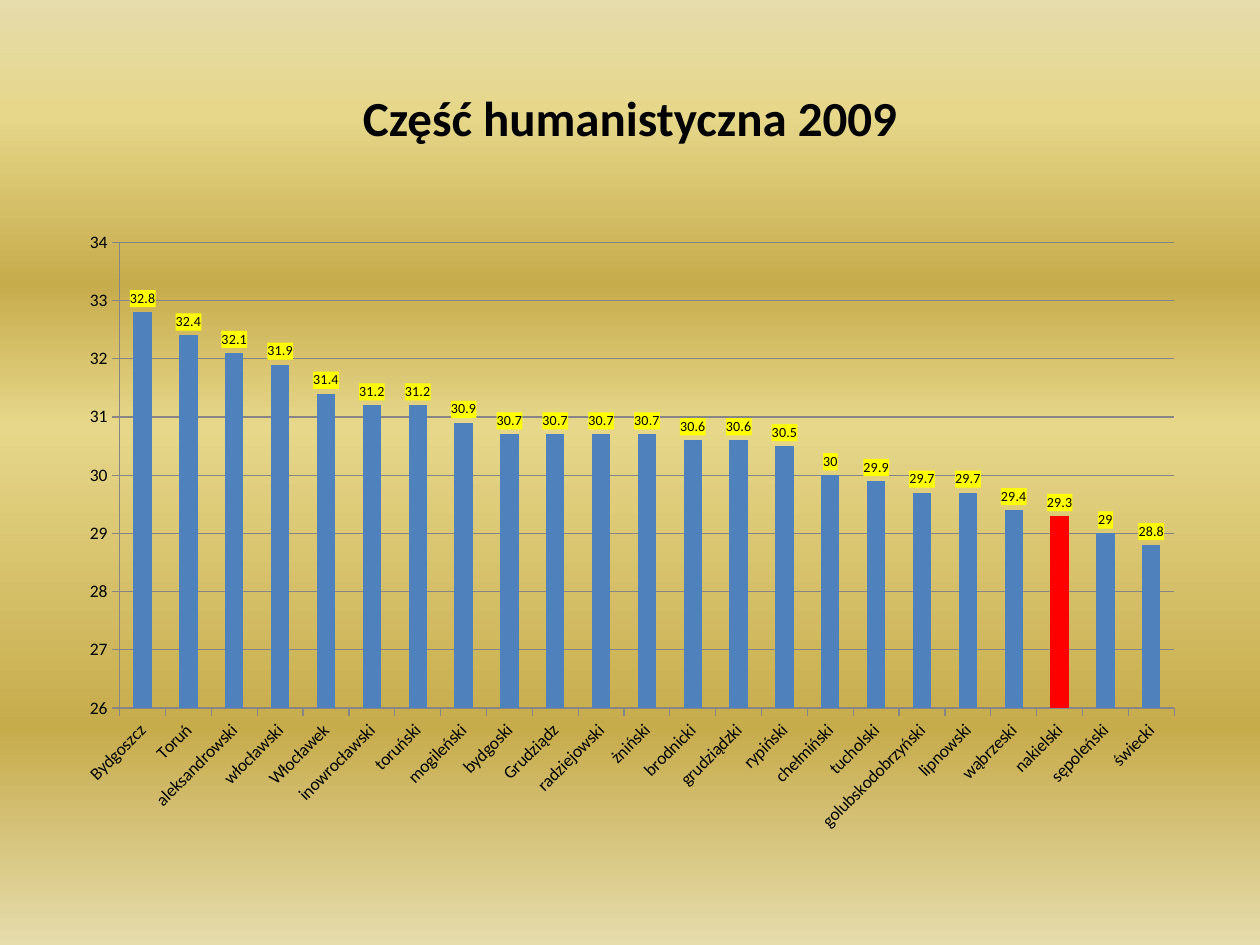
from typing import NamedTuple

import pptx
import pptx.chart.data
import pptx.dml.color
import pptx.enum.chart
import pptx.enum.text
import pptx.oxml
import pptx.oxml.ns
import pptx.util
from lxml import etree

RGB = pptx.dml.color.RGBColor
qn = pptx.oxml.ns.qn

BLACK = RGB(0x00, 0x00, 0x00)
BLUE = RGB(0x4F, 0x81, 0xBD)
RED = RGB(0xFF, 0x00, 0x00)
YELLOW = RGB(0xFF, 0xFF, 0x00)
GREY = RGB(0x86, 0x86, 0x86)
CREAM = RGB(0xE6, 0xDC, 0xAC)
SAND = RGB(0xE6, 0xD7, 0x8A)
GOLD = RGB(0xC7, 0xAC, 0x4C)
FONT = "Calibri"
WIDTH = pptx.util.Inches(10)
HEIGHT = pptx.util.Inches(7.5)


class Area(NamedTuple):
    x: float
    y: float
    w: float
    h: float

    def on_slide(self) -> tuple[int, int, int, int]:
        return (int(self.x * WIDTH), int(self.y * HEIGHT),
                int(self.w * WIDTH), int(self.h * HEIGHT))


class Stop(NamedTuple):
    percent: int
    color: RGB


class County(NamedTuple):
    name: str
    score: float


TITLE = Area(0.05, 0.04, 0.9, 1 / 6)
CHART = Area(0.05, 0.7 / 3, 0.9, 0.66)
PLOT = Area(0.05, 0.035, 0.93, 0.747)
STOPS = [Stop(0, CREAM), Stop(12, SAND), Stop(30, GOLD),
         Stop(45, SAND), Stop(77, GOLD), Stop(100, CREAM)]
HIGHLIGHT = "nakielski"
COUNTIES = [
    County("Bydgoszcz", 32.8), County("Toruń", 32.4),
    County("aleksandrowski", 32.1), County("włocławski", 31.9),
    County("Włocławek", 31.4), County("inowrocławski", 31.2),
    County("toruński", 31.2), County("mogileński", 30.9),
    County("bydgoski", 30.7), County("Grudziądz", 30.7),
    County("radziejowski", 30.7), County("żniński", 30.7),
    County("brodnicki", 30.6), County("grudziądzki", 30.6),
    County("rypiński", 30.5), County("chełmiński", 30),
    County("tucholski", 29.9), County("golubskodobrzyński", 29.7),
    County("lipnowski", 29.7), County("wąbrzeski", 29.4),
    County("nakielski", 29.3), County("sępoleński", 29),
    County("świecki", 28.8),
]


def style_font(font, size: float, bold: bool = False) -> None:
    font.name = FONT
    font.size = pptx.util.Pt(size)
    font.bold = bold
    font.color.rgb = BLACK


def paint(fill, color: RGB) -> None:
    fill.solid()
    fill.fore_color.rgb = color


def set_background(s, stops: list[Stop]) -> None:
    fill = s.background.fill
    fill.gradient()
    fill.gradient_angle = 270
    gs_list = s.element.find(".//" + qn("a:gsLst"))
    for gs in list(gs_list):
        gs_list.remove(gs)
    for stop in stops:
        gs = etree.SubElement(gs_list, qn("a:gs"), pos=str(stop.percent * 1000))
        etree.SubElement(gs, qn("a:srgbClr"), val=str(stop.color))


def add_title(s, text: str, area: Area) -> None:
    tf = s.shapes.add_textbox(*area.on_slide()).text_frame
    tf.word_wrap = True
    tf.vertical_anchor = pptx.enum.text.MSO_ANCHOR.MIDDLE
    tf.text = text
    p = tf.paragraphs[0]
    p.alignment = pptx.enum.text.PP_ALIGN.CENTER
    style_font(p.runs[0].font, 28, True)


def set_plot_area(chart, area: Area) -> None:
    plot_area = chart.element.find(".//" + qn("c:plotArea"))
    layout = plot_area.find(qn("c:layout"))
    if layout is None:
        layout = etree.Element(qn("c:layout"))
        plot_area.insert(0, layout)
    manual = etree.SubElement(layout, qn("c:manualLayout"))
    settings = {"layoutTarget": "inner", "xMode": "edge", "yMode": "edge"}
    for tag, value in {**settings, **area._asdict()}.items():
        etree.SubElement(manual, qn(f"c:{tag}"), val=str(value))


def style_axes(chart) -> None:
    for axis in (chart.category_axis, chart.value_axis):
        axis.major_tick_mark = pptx.enum.chart.XL_TICK_MARK.OUTSIDE
        axis.format.line.color.rgb = GREY
        style_font(axis.tick_labels.font, 10)
    body = chart.category_axis._element.find(".//" + qn("a:bodyPr"))
    body.set("rot", str(-45 * 60000))
    body.set("vert", "horz")
    axis = chart.value_axis
    axis.minimum_scale, axis.maximum_scale, axis.major_unit = 26, 34, 1
    axis.has_major_gridlines = True
    axis.major_gridlines.format.line.color.rgb = GREY


def add_labels(series) -> None:
    labels = series.data_labels
    labels.show_value = True
    labels.position = pptx.enum.chart.XL_LABEL_POSITION.OUTSIDE_END
    style_font(labels.font, 8)
    sp_pr = etree.Element(qn("c:spPr"))
    fill = etree.SubElement(sp_pr, qn("a:solidFill"))
    etree.SubElement(fill, qn("a:srgbClr"), val=str(YELLOW))
    labels._element.find(qn("c:txPr")).addprevious(sp_pr)


def add_score_chart(s, counties: list[County], area: Area) -> None:
    data = pptx.chart.data.CategoryChartData()
    data.categories = [county.name for county in counties]
    data.add_series("Series 1", [county.score for county in counties])
    kind = pptx.enum.chart.XL_CHART_TYPE.COLUMN_CLUSTERED
    chart = s.shapes.add_chart(kind, *area.on_slide(), data).chart
    chart.has_legend = False
    chart.has_title = False
    style_font(chart.font, 10)
    set_plot_area(chart, PLOT)
    style_axes(chart)
    plot = chart.plots[0]
    plot.gap_width = 150
    plot.vary_by_categories = False
    series = plot.series[0]
    paint(series.format.fill, BLUE)
    index = [county.name for county in counties].index(HIGHLIGHT)
    paint(series.points[index].format.fill, RED)
    add_labels(series)


def main() -> None:
    prs = pptx.Presentation()
    prs.slide_width, prs.slide_height = WIDTH, HEIGHT
    s = prs.slides.add_slide(prs.slide_layouts[6])
    set_background(s, STOPS)
    add_title(s, "Część humanistyczna 2009", TITLE)
    add_score_chart(s, COUNTIES, CHART)
    prs.save("out.pptx")


if __name__ == "__main__":
    main()
